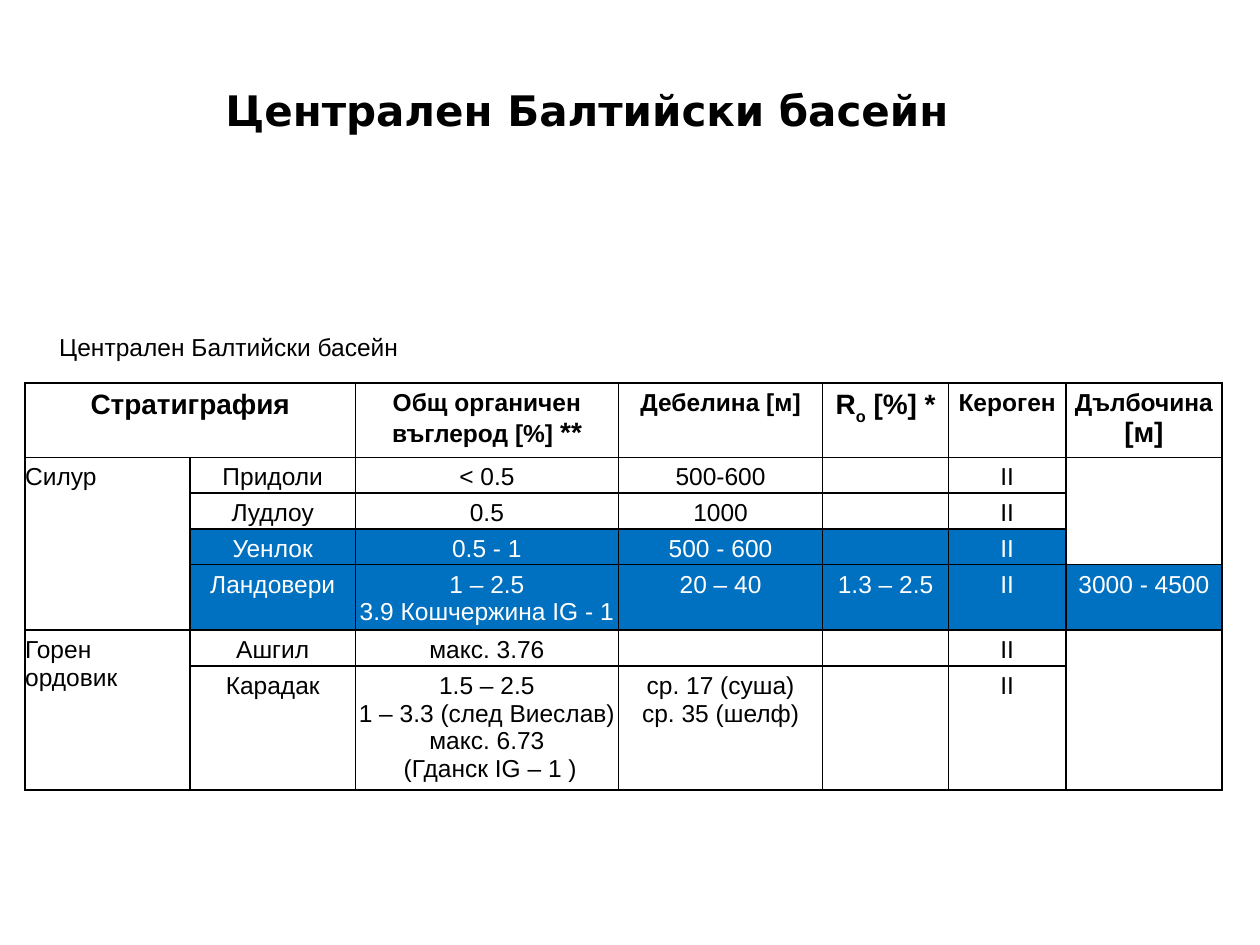
"""Build a slide with a stratigraphy table of the Central Baltic basin."""
from dataclasses import dataclass

from lxml import etree
from pptx import Presentation
from pptx.dml.color import RGBColor
from pptx.enum.text import MSO_ANCHOR, PP_ALIGN
from pptx.oxml.ns import qn
from pptx.util import Inches, Pt

LEFT, CENTER = PP_ALIGN.LEFT, PP_ALIGN.CENTER
MIDDLE = MSO_ANCHOR.MIDDLE


@dataclass(frozen=True)
class Theme:
    black: str = "000000"
    white: str = "FFFFFF"
    highlight: str = "0070C0"
    title_font: str = "DejaVu Sans"
    body_font: str = "Arial"
    title: int = 24
    large: int = 16
    body: int = 14
    small: int = 11


theme = Theme()


def write_text(frame, text, size=theme.body, color=theme.black, bold=False,
               font=theme.body_font, align=LEFT):
    """Write lines of text, or a list of (text, size, baseline) runs."""
    if isinstance(text, str):
        lines = [[(line, size, 0)] for line in text.split("\n")]
    else:
        lines = [text]
    for index, runs in enumerate(lines):
        paragraph = frame.add_paragraph() if index else frame.paragraphs[0]
        paragraph.alignment = align
        for content, points, baseline in runs:
            if not content:
                etree.SubElement(paragraph._p, qn("a:endParaRPr"), sz=str(points * 100))
                continue
            run = paragraph.add_run()
            run.text = content
            run.font.size = Pt(points)
            run.font.name = font
            run.font.bold = bold
            run.font.color.rgb = RGBColor.from_string(color)
            if baseline:
                run.font._element.set("baseline", str(baseline * 1000))


def add_borders(cell, color=theme.black, width=1):
    """Draw a solid line on each side of a table cell."""
    properties = cell._tc.get_or_add_tcPr()
    for side in ("lnL", "lnR", "lnT", "lnB"):
        line = etree.SubElement(properties, qn(f"a:{side}"), w=str(Pt(width)))
        fill = etree.SubElement(line, qn("a:solidFill"))
        etree.SubElement(fill, qn("a:srgbClr"), val=color)


presentation = Presentation()
presentation.slide_width = Inches(10)
presentation.slide_height = Inches(7.5)
slide = presentation.slides.add_slide(presentation.slide_layouts[6])

title = slide.shapes.add_textbox(Inches(1.69), Inches(0.52), Inches(7.81), Inches(1.03)).text_frame
title.word_wrap = True
title.vertical_anchor = MIDDLE
title.margin_bottom = Inches(0.38)
write_text(title, "Централен Балтийски басейн", size=theme.title, bold=True, font=theme.title_font)

column_widths = [1.31, 1.31, 2.09, 1.62, 1, 0.93, 1.24]
row_heights = [0.59, 0.28, 0.28, 0.28, 0.52, 0.28, 0.98]
rows = [
    [
        [("Стратиграфия", theme.large, 0)],
        "",
        [("Общ органичен въглерод [%] ", theme.body, 0), ("**", theme.large, 0)],
        "Дебелина [м]",
        [("R", theme.large, 0), ("o", theme.large, -30), (" [%] *", theme.large, 0)],
        "Кероген",
        [("Дълбочина", theme.body, 0), (" ", theme.small, 0), ("[м]", theme.large, 0)],
    ],
    ["Силур", "Придоли", "< 0.5", "500-600", "", "II", ""],
    ["", "Лудлоу", "0.5", "1000", "", "II", ""],
    ["", "Уенлок", "0.5 - 1", "500 - 600", "", "II", ""],
    ["", "Ландовери", "1 – 2.5\n3.9 Кошчержина IG - 1", "20 – 40", "1.3 – 2.5", "II", "3000 - 4500"],
    ["Горен ордовик", "Ашгил", "макс. 3.76", "", "", "II", ""],
    ["", "Карадак", "1.5 – 2.5\n1 – 3.3 (след Виеслав)\nмакс. 6.73\n (Гданск IG – 1 )",
     "ср. 17 (суша)\nср. 35 (шелф)", "", "II", ""],
]
merges = [((0, 0), (0, 1)), ((1, 0), (4, 0)), ((5, 0), (6, 0)), ((1, 6), (3, 6)), ((5, 6), (6, 6))]
highlighted = {(3, column) for column in range(1, 6)} | {(4, column) for column in range(1, 7)}

table = slide.shapes.add_table(
    len(rows), len(column_widths), Inches(0.2), Inches(3.04),
    Inches(sum(column_widths)), Inches(sum(row_heights)),
).table
table.first_row = False
table.horz_banding = False
for column, width in zip(table.columns, column_widths):
    column.width = Inches(width)
for row, height in zip(table.rows, row_heights):
    row.height = Inches(height)

for row_index, row in enumerate(rows):
    for column_index, text in enumerate(row):
        cell = table.cell(row_index, column_index)
        cell.margin_left = cell.margin_right = cell.margin_bottom = 0
        cell.margin_top = Inches(0.05)
        add_borders(cell)
        is_header = row_index == 0
        is_highlighted = (row_index, column_index) in highlighted
        if is_highlighted:
            cell.fill.solid()
            cell.fill.fore_color.rgb = RGBColor.from_string(theme.highlight)
        else:
            cell.fill.background()
        write_text(
            cell.text_frame, text, bold=is_header,
            color=theme.white if is_highlighted else theme.black,
            align=CENTER if is_header or column_index else LEFT,
        )

for first, last in merges:
    table.cell(*first).merge(table.cell(*last))

caption = slide.shapes.add_textbox(Inches(0.47), Inches(2.58), Inches(2.71), Inches(0.29)).text_frame
caption.word_wrap = False
caption.vertical_anchor = MIDDLE
caption.margin_left = caption.margin_right = caption.margin_bottom = 0
caption.margin_top = Inches(0.05)
write_text(caption, "Централен Балтийски басейн")

presentation.save("out.pptx")
